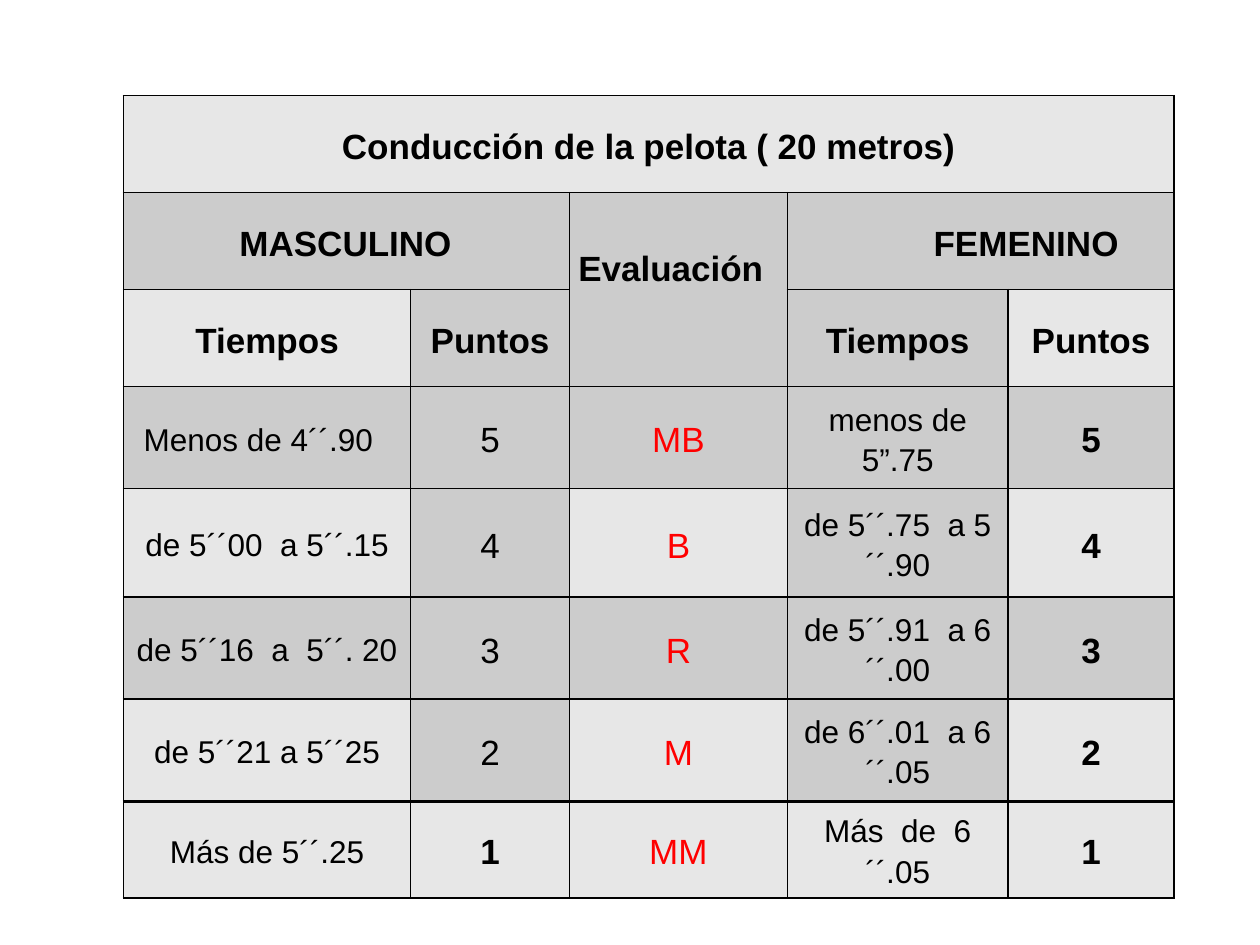
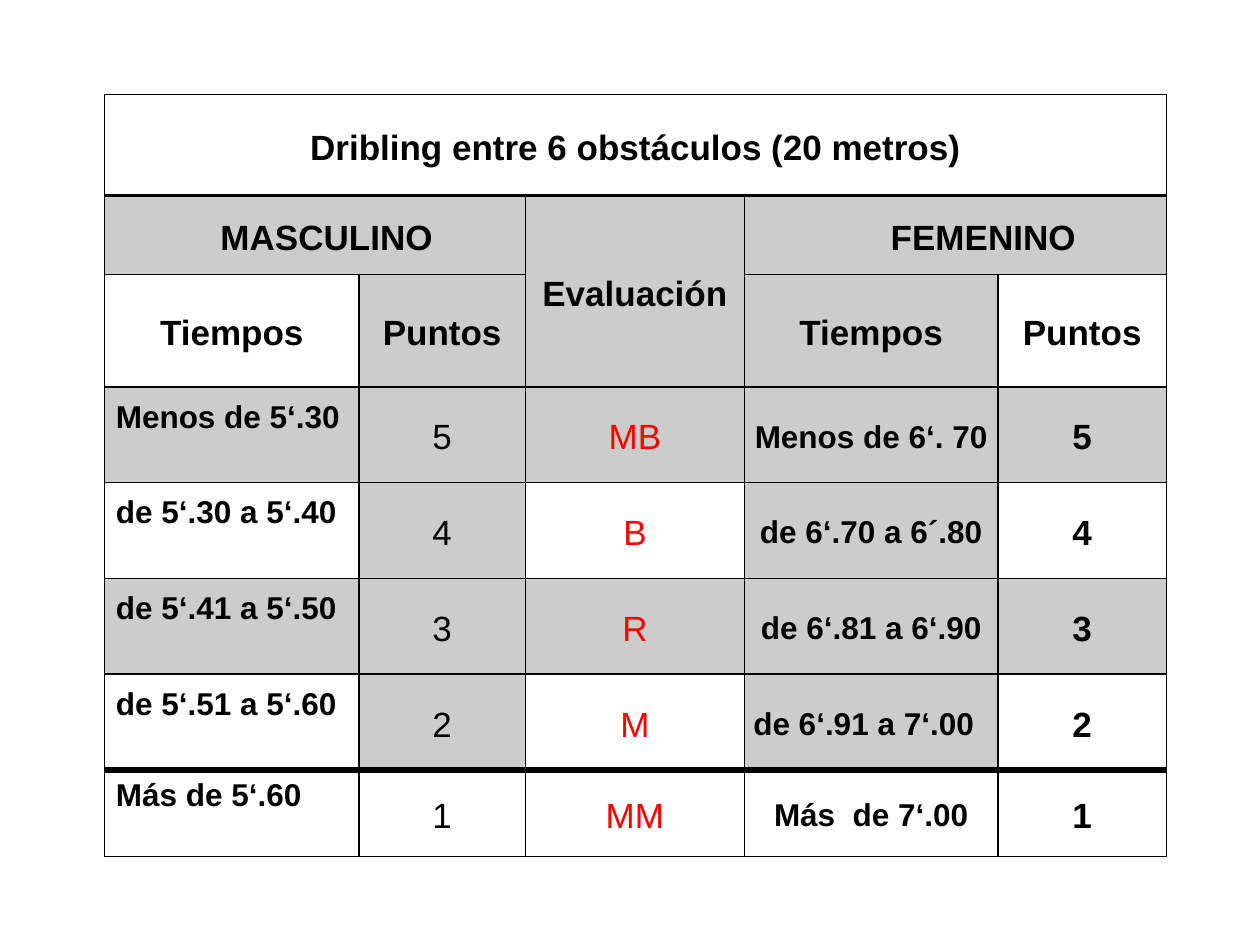
from lxml.etree import SubElement
from pptx import Presentation
from pptx.dml.color import RGBColor
from pptx.enum.text import MSO_ANCHOR as ANCHOR, PP_ALIGN as ALIGN
from pptx.oxml import parse_xml
from pptx.oxml.ns import nsdecls, qn
from pptx.util import Inches, Pt

BLACK, RED, GREY, LIGHT = "000000", "FF0000", "CCCCCC", "E7E7E7"
PAD = 0.07
LAST = 7
GRADES = ["MB", "B", "R", "M", "MM"]


def color(hex_str):
    return RGBColor.from_string(hex_str)


class Deck:
    """Holds the shared style and the current slide."""

    font = "Arial"
    head_size, time_size = 20, 18
    line_spacing = 1.15

    def __init__(self):
        self.prs = Presentation()
        self.prs.slide_width, self.prs.slide_height = Inches(10), Inches(7.5)
        self.s = None

    def slide(self):
        self.s = self.prs.slides.add_slide(self.prs.slide_layouts[6])

    def table(self, left, top, cols, rows):
        frame = self.s.shapes.add_table(
            len(rows), len(cols), Inches(left), Inches(top),
            Inches(sum(cols)), Inches(sum(rows)))
        tbl = frame.table
        tbl.first_row = tbl.horz_banding = False
        for col, width in zip(tbl.columns, cols):
            col.width = Inches(width)
        for row, height in zip(tbl.rows, rows):
            row.height = Inches(height)
        return tbl

    def text(self, cell, text, size=head_size, bold=True, hex_str=BLACK,
             align=ALIGN.CENTER, left=0, right=0, bottom=0):
        """Write one line; left, right and bottom add to the cell margins."""
        fmt = {"vertical_anchor": ANCHOR.MIDDLE, "margin_top": 0,
               "margin_left": Inches(PAD + left),
               "margin_right": Inches(PAD + right),
               "margin_bottom": Inches(bottom)}
        for name, value in fmt.items():
            setattr(cell, name, value)
        p = cell.text_frame.paragraphs[0]
        p.alignment, p.line_spacing = align, self.line_spacing
        r = p.add_run()
        r.text = text
        for name, value in {"name": self.font, "size": Pt(size), "bold": bold}.items():
            setattr(r.font, name, value)
        r.font.color.rgb = color(hex_str)

    def fill(self, cell, hex_str, alpha=None):
        if hex_str is None:
            cell.fill.background()
            return
        cell.fill.solid()
        cell.fill.fore_color.rgb = color(hex_str)
        if alpha:
            clr = cell._tc.tcPr.find(".//" + qn("a:srgbClr"))
            SubElement(clr, qn("a:alpha")).set("val", str(alpha * 1000))

    def borders(self, cell, top, bottom):
        widths = {"lnL": 1, "lnR": 1, "lnT": top, "lnB": bottom}
        for i, (side, width) in enumerate(widths.items()):
            cell._tc.get_or_add_tcPr().insert(i, parse_xml(
                f'<a:{side} {nsdecls("a")} w="{Pt(width)}"><a:solidFill>'
                f'<a:srgbClr val="{BLACK}"/></a:solidFill></a:{side}>'))

    def score_table(self, place, cols, rows, title, times, evaluation,
                    shade, plain, rules, points_bold):
        """Table of times and points; rules maps a row to its top line width."""
        tbl = self.table(*place, cols, rows)
        # Fills and borders
        for r in range(len(rows)):
            for c in range(len(cols)):
                cell = tbl.cell(r, c)
                shaded = 0 < r < LAST and (r % 2 or c in (1, 3))
                self.fill(cell, *(shade if shaded else plain))
                self.borders(cell, rules.get(r, 1), rules.get(r + 1, 1))
        # Headings
        for start, end in [((0, 0), (0, 4)), ((1, 0), (1, 1)),
                           ((1, 2), (2, 2)), ((1, 3), (1, 4))]:
            tbl.cell(*start).merge(tbl.cell(*end))
        self.text(tbl.cell(0, 0), title)
        self.text(tbl.cell(1, 0), "MASCULINO", align=ALIGN.LEFT, left=0.85)
        self.text(tbl.cell(1, 2), "Evaluación", **evaluation)
        self.text(tbl.cell(1, 3), "FEMENINO", align=ALIGN.LEFT, left=1.09)
        for c in (0, 3):
            self.text(tbl.cell(2, c), "Tiempos")
            self.text(tbl.cell(2, c + 1), "Puntos")
        # Grades, times and points
        for i, (grade, (male, female)) in enumerate(zip(GRADES, times)):
            r, points = i + 3, str(5 - i)
            for c, (time, fmt) in ((0, male), (3, female)):
                self.text(tbl.cell(r, c), time, size=self.time_size, **fmt)
            self.text(tbl.cell(r, 1), points, bold=points in points_bold)
            self.text(tbl.cell(r, 2), grade, bold=False, hex_str=RED)
            self.text(tbl.cell(r, 4), points)


def main():
    deck = Deck()
    regular = {"bold": False}
    high = {"align": ALIGN.LEFT, "left": 0.02, "bottom": 0.32}

    # Slide 1: ball control
    deck.slide()
    deck.score_table(
        (0.98, 0.76), [2.28, 1.26, 1.73, 1.75, 1.32],
        [0.77, 0.77, 0.77, 0.81, 0.86, 0.81, 0.81, 0.77],
        "Conducción de la pelota ( 20 metros)",
        [(("Menos de 4´´.90", {"bold": False, "right": 0.14}),
          ("menos de 5”.75", regular)),
         (("de 5´´00  a 5´´.15", regular), ("de 5´´.75  a 5´´.90", regular)),
         (("de 5´´16  a  5´´. 20", regular), ("de 5´´.91  a 6´´.00", regular)),
         (("de 5´´21 a 5´´25", regular), ("de 6´´.01  a 6´´.05", regular)),
         (("Más de 5´´.25", regular), ("Más  de  6´´.05", regular))],
        evaluation={"align": ALIGN.LEFT, "bottom": 0.37},
        shade=(GREY,), plain=(LIGHT,), rules={LAST: 2}, points_bold="1")

    # Slide 2: dribbling
    deck.slide()
    deck.score_table(
        (0.83, 0.75), [2.02, 1.32, 1.74, 2.01, 1.34],
        [0.8, 0.63, 0.89, 0.76, 0.76, 0.76, 0.76, 0.69],
        "Dribling entre 6 obstáculos (20 metros)",
        [(("Menos de 5‘.30", high), ("Menos de 6‘. 70", {})),
         (("de 5‘.30 a 5‘.40", high), ("de 6‘.70 a 6´.80", {})),
         (("de 5‘.41 a 5‘.50", high), ("de 6‘.81 a 6‘.90", {})),
         (("de 5‘.51 a 5‘.60", high), ("de 6‘.91 a 7‘.00", {"align": ALIGN.LEFT})),
         (("Más de 5‘.60", high), ("Más  de 7‘.00", {}))],
        evaluation={}, shade=(BLACK, 20), plain=(None,),
        rules={1: 2, LAST: 4}, points_bold="")

    deck.prs.save("out.pptx")


if __name__ == "__main__":
    main()
